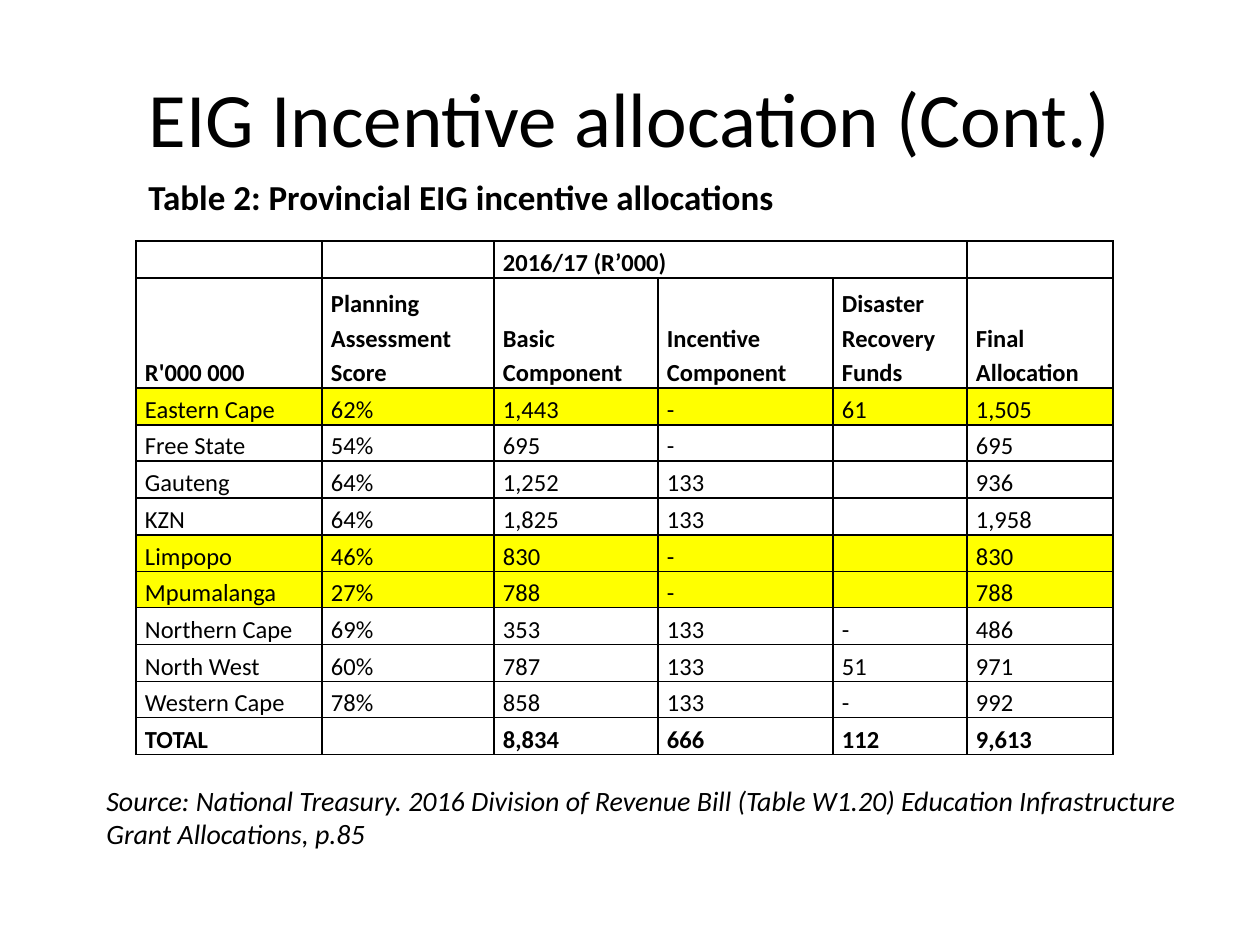
from lxml.etree import SubElement
from pptx import Presentation
from pptx.dml.color import RGBColor
from pptx.enum.text import MSO_ANCHOR, PP_ALIGN
from pptx.oxml.ns import qn
from pptx.util import Emu, Pt

PX_PER_INCH = 126
FONT = "Calibri"
BLACK = RGBColor(0x00, 0x00, 0x00)
YELLOW = RGBColor(0xFF, 0xFF, 0x00)

COLUMN_WIDTHS = [186, 172, 164, 175, 134, 146]
HEADER_HEIGHTS = [37, 110]
BODY_HEIGHT = 367
CELL_POINTS = 14
HIGHLIGHTED = {"Eastern Cape", "Limpopo", "Mpumalanga"}

HEADERS = [
    ["", "", "2016/17 (R’000)", "", "", ""],
    ["R'000 000", "Planning Assessment Score", "Basic Component",
     "Incentive Component", "Disaster Recovery Funds", "Final Allocation"],
]
PROVINCES = [
    ["Eastern Cape", "62%", "1,443", "-", "61", "1,505"],
    ["Free State", "54%", "695", "-", "", "695"],
    ["Gauteng", "64%", "1,252", "133", "", "936"],
    ["KZN", "64%", "1,825", "133", "", "1,958"],
    ["Limpopo", "46%", "830", "-", "", "830"],
    ["Mpumalanga", "27%", "788", "-", "", "788"],
    ["Northern Cape", "69%", "353", "133", "-", "486"],
    ["North West", "60%", "787", "133", "51", "971"],
    ["Western Cape", "78%", "858", "133", "-", "992"],
]
TOTAL = ["TOTAL", "", "8,834", "666", "112", "9,613"]


def px(length):
    return Emu(round(length * 914400 / PX_PER_INCH))


def format_runs(paragraph, points, bold=False, italic=False):
    for run in paragraph.runs:
        font = run.font
        font.name, font.size = FONT, Pt(points)
        font.bold, font.italic = bold, italic
        font.color.rgb = BLACK


def set_title(slide, text):
    title = slide.shapes.title
    title.left, title.top, title.width, title.height = px(63), px(38), px(1134), px(157)
    title.text_frame.text = text
    title.text_frame.vertical_anchor = MSO_ANCHOR.MIDDLE
    paragraph = title.text_frame.paragraphs[0]
    paragraph.alignment = PP_ALIGN.CENTER
    format_runs(paragraph, 44)


def add_text(slide, text, left, top, width, height, points, indent=0, **style):
    """Add a wrapped text box; indent applies to the first line, in px."""
    frame = slide.shapes.add_textbox(px(left), px(top), px(width), px(height)).text_frame
    frame.word_wrap = True
    frame.text = text
    paragraph = frame.paragraphs[0]
    if indent:
        paragraph._p.get_or_add_pPr().set("indent", str(px(indent)))
    format_runs(paragraph, points, **style)


def draw_borders(cell):
    """Give all four sides a black 1 pt line, placed before the cell's fill."""
    properties = cell._tc.get_or_add_tcPr()
    for position, side in enumerate(("a:lnL", "a:lnR", "a:lnT", "a:lnB")):
        line = SubElement(properties, qn(side), w=str(Pt(1)))
        fill = SubElement(line, qn("a:solidFill"))
        SubElement(fill, qn("a:srgbClr"), val=str(BLACK))
        properties.insert(position, line)


def fill_cell(cell, text, bold, highlighted):
    cell.margin_left = cell.margin_right = px(9)
    cell.margin_top = cell.margin_bottom = 0
    cell.vertical_anchor = MSO_ANCHOR.BOTTOM
    if highlighted:
        cell.fill.solid()
        cell.fill.fore_color.rgb = YELLOW
    else:
        cell.fill.background()
    draw_borders(cell)
    paragraph = cell.text_frame.paragraphs[0]
    if text:
        paragraph.text = text
        paragraph.alignment = PP_ALIGN.JUSTIFY
        paragraph.line_spacing = 1.15
        format_runs(paragraph, CELL_POINTS, bold=bold)
    else:
        # An empty cell would otherwise keep 18 pt and stretch its row.
        SubElement(paragraph._p, qn("a:endParaRPr"), sz=str(CELL_POINTS * 100))


def add_allocation_table(slide, left, top):
    records = HEADERS + PROVINCES + [TOTAL]
    body_count = len(records) - len(HEADERS)
    body_edges = [round(i * BODY_HEIGHT / body_count) for i in range(body_count + 1)]
    heights = HEADER_HEIGHTS + [b - a for a, b in zip(body_edges, body_edges[1:])]

    table = slide.shapes.add_table(
        len(records), len(COLUMN_WIDTHS), px(left), px(top),
        px(sum(COLUMN_WIDTHS)), px(sum(heights))).table
    table.first_row = table.horz_banding = False
    for column, width in zip(table.columns, COLUMN_WIDTHS):
        column.width = px(width)
    for row, height, record in zip(table.rows, heights, records):
        row.height = px(height)
        bold = record not in PROVINCES
        for cell, text in zip(row.cells, record):
            fill_cell(cell, text, bold, record[0] in HIGHLIGHTED)
    table.cell(0, 2).merge(table.cell(0, 4))


def main():
    presentation = Presentation()
    presentation.slide_width, presentation.slide_height = px(1260), px(945)
    slide = presentation.slides.add_slide(presentation.slide_layouts[5])

    set_title(slide, "EIG Incentive allocation (Cont.)")
    add_allocation_table(slide, 136, 241)
    add_text(slide, "Table 2: Provincial EIG incentive allocations",
             73, 169, 746, 93, 20, indent=63, bold=True)
    add_text(slide, "Source: National Treasury. 2016 Division of Revenue Bill (Table W1.20) "
             "Education Infrastructure Grant Allocations, p.85",
             94, 777, 1113, 118, 16, italic=True)
    presentation.save("out.pptx")


if __name__ == "__main__":
    main()
